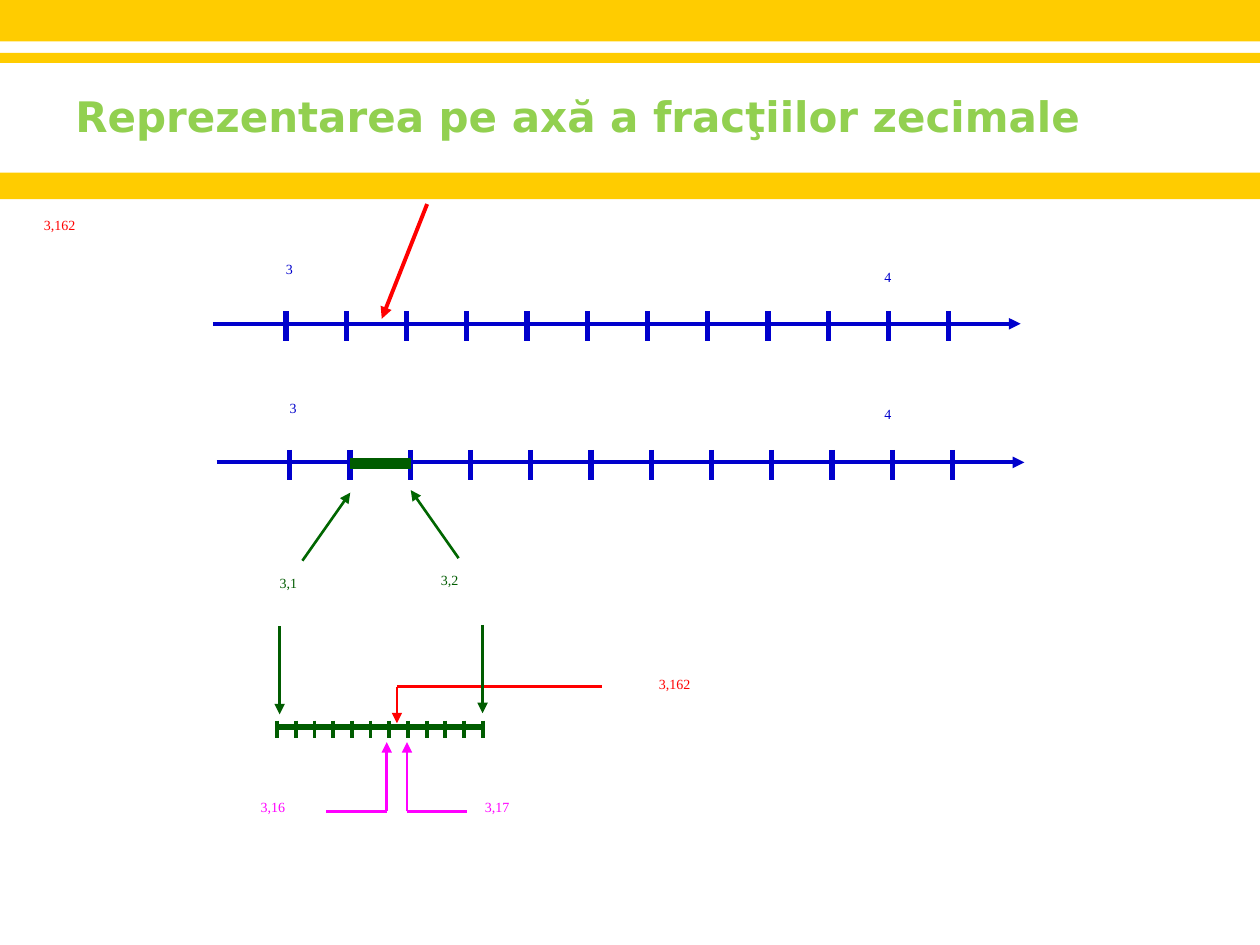
from lxml import etree
from pptx import Presentation
from pptx.dml.color import RGBColor
from pptx.enum.shapes import MSO_CONNECTOR as Connector, MSO_SHAPE as Shape
from pptx.oxml.ns import qn
from pptx.util import Inches, Pt

GOLD = RGBColor(0xFF, 0xCC, 0x00)
LIME = RGBColor(0x92, 0xD0, 0x50)
BLUE = RGBColor(0x00, 0x00, 0xCC)
GREEN = RGBColor(0x00, 0x5C, 0x00)
ARROW_GREEN = RGBColor(0x00, 0x66, 0x00)
RED = RGBColor(0xFF, 0x00, 0x00)
MAGENTA = RGBColor(0xFF, 0x00, 0xFF)


def add_line(slide, start, end, color, width, arrow=False):
    """Draw a straight line, with an arrowhead at its end if asked."""
    line = slide.shapes.add_connector(
        Connector.STRAIGHT, *(Inches(value) for value in (*start, *end)))
    line.line.color.rgb = color
    line.line.width = Pt(width)
    if arrow:
        outline = line.line._get_or_add_ln()
        etree.SubElement(outline, qn("a:tailEnd"), type="triangle")
    etree.SubElement(line._element.spPr, qn("a:effectLst"))


def add_text(slide, box, text, color, size=8, font="Times New Roman", bold=False):
    """Write one line of text in a box."""
    shape = slide.shapes.add_textbox(*(Inches(value) for value in box))
    frame = shape.text_frame
    frame.word_wrap = True
    frame.margin_right = 0
    frame.text = text
    run_font = frame.paragraphs[0].runs[0].font
    run_font.name, run_font.size, run_font.bold = font, Pt(size), bold
    run_font.color.rgb = color


def add_header(slide, left, top, width):
    """Draw the gold bands and the title between them."""
    for offset, height in ((0, 0.33), (1.37, 0.21), (0.42, 0.08)):
        band = slide.shapes.add_shape(
            Shape.RECTANGLE, Inches(left), Inches(top + offset),
            Inches(width), Inches(height))
        band.shadow.inherit = False
        band.fill.solid()
        band.fill.fore_color.rgb = GOLD
        band.line.fill.background()
    add_text(slide, (left + 0.5, top + 0.67, 8.67, 0.5),
             "Reprezentarea pe axă a fracţiilor zecimale", LIME, 24, "DejaVu Sans", True)


def add_ticks(slide, left, top, width, height, color, weight):
    """Draw twelve evenly spaced ticks across a box."""
    for index in range(12):
        x = left + index * width / 11
        add_line(slide, (x, top), (x, top + height), color, weight)


def add_unit_axis(slide, left, top, width, labels):
    """Draw an axis from 3 to 4 divided into tenths."""
    add_line(slide, (left, top), (left + width, top), BLUE, 2.25, True)
    add_ticks(slide, left + 0.58, top - 0.1, 5.26, 0.24, BLUE, 3)
    for text, x, y in labels:
        add_text(slide, (x, y, 0.19, 0.3), text, BLUE)


def add_tenths_axis(slide, left, top, width):
    """Draw the enlarged segment divided into hundredths."""
    right = left + width
    add_ticks(slide, left, top - 0.05, width, 0.14, GREEN, 2.25)
    add_line(slide, (left, top), (right, top), GREEN, 3)
    for x, y in ((left + 0.02, top - 0.8), (right, top - 0.81)):
        add_line(slide, (x, y), (x, y + 0.7), GREEN, 1.5, True)


def add_elbow_label(slide, box, text, color, corner, line_end, tip):
    """Write a label with a lead line that turns into a vertical arrow."""
    x, y = corner
    add_text(slide, box, text, color)
    add_line(slide, corner, (x, tip), color, 1.5, True)
    add_line(slide, corner, (line_end, y), color, 1.5)


def add_segment(slide, left, top, width):
    """Highlight the segment from 3,1 to 3,2 and label its ends."""
    right = left + width
    add_line(slide, (left, top), (right, top), GREEN, 6)
    for text, tip, offset, y in (("3,1", left, -0.38, 3.91), ("3,2", right, 0.38, 3.89)):
        add_text(slide, (tip + offset - 0.28 + (0.04 if offset > 0 else 0),
                         y + 0.6, 0.48, 0.35), text, GREEN)
        add_line(slide, (tip + offset, y + 0.54), (tip, y), ARROW_GREEN, 1.5, True)


def main():
    """Build the slide and save it."""
    presentation = Presentation()
    presentation.slide_width, presentation.slide_height = Inches(10), Inches(7.5)
    slide = presentation.slides.add_slide(presentation.slide_layouts[6])
    add_header(slide, 0, 0, 10)
    add_unit_axis(slide, 1.72, 3.67, 6.41, (("3", 2.2, 3.12), ("4", 6.92, 3.17)))
    add_unit_axis(slide, 1.69, 2.57, 6.41, (("3", 2.17, 2.02), ("4", 6.92, 2.08)))
    add_segment(slide, 2.78, 3.68, 0.48)
    add_elbow_label(slide, (5.13, 5.31, 0.71, 0.27), "3,162", RED,
                    (3.15, 5.45), 4.78, 5.74)
    add_elbow_label(slide, (1.97, 6.29, 0.57, 0.3), "3,16", MAGENTA,
                    (3.07, 6.44), 2.59, 5.89)
    add_elbow_label(slide, (3.75, 6.29, 0.57, 0.3), "3,17", MAGENTA,
                    (3.23, 6.44), 3.71, 5.89)
    add_tenths_axis(slide, 2.2, 5.77, 1.63)
    add_line(slide, (3.39, 1.62), (3.03, 2.53), RED, 2.25, True)
    add_text(slide, (0.25, 1.67, 0.83, 0.25), "3,162", RED)
    presentation.save("out.pptx")


if __name__ == "__main__":
    main()
